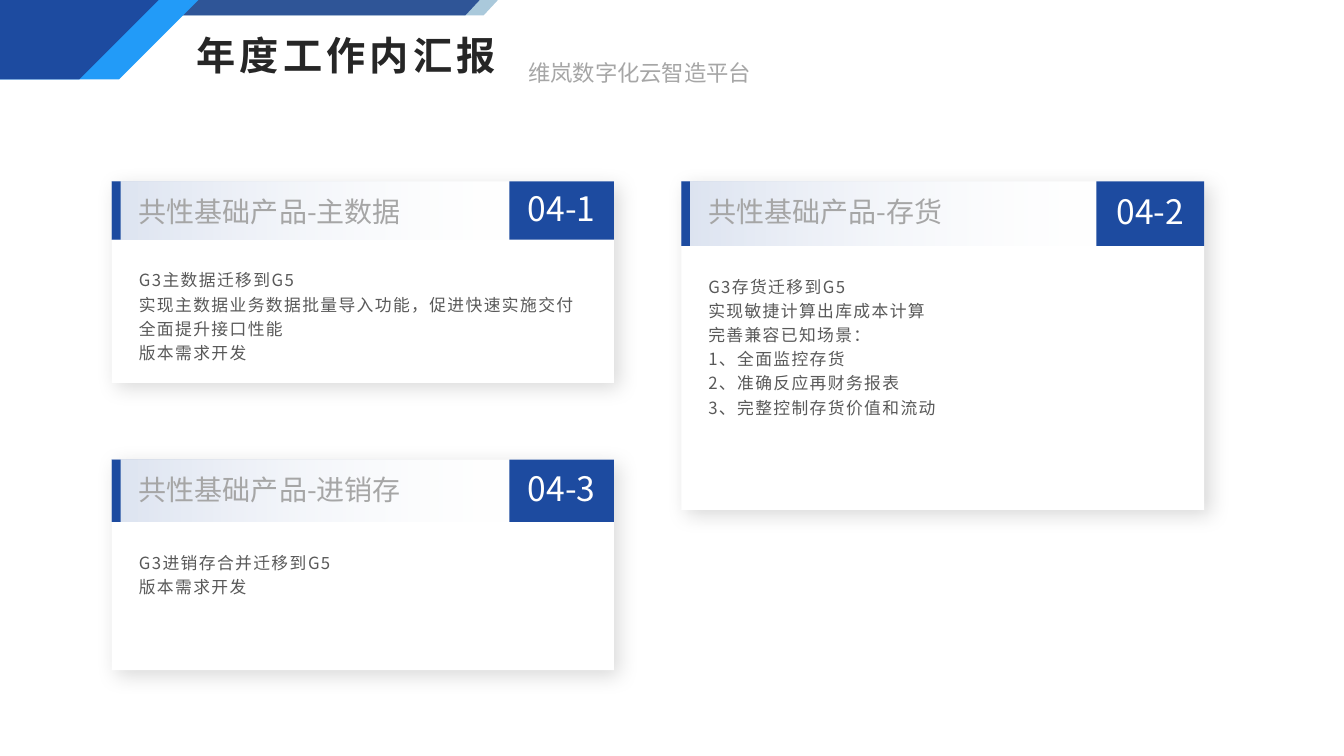
from lxml.etree import SubElement
from pptx import Presentation
from pptx.dml.color import RGBColor
from pptx.enum.shapes import MSO_SHAPE
from pptx.enum.text import MSO_ANCHOR, PP_ALIGN
from pptx.oxml.ns import qn
from pptx.util import Cm, Pt

FONT = "Noto Sans CJK SC"
NAVY = RGBColor(0x1D, 0x4B, 0xA0)
SKY = RGBColor(0x22, 0x9B, 0xF8)
STEEL = RGBColor(0x2F, 0x55, 0x97)
TEAL = RGBColor(0x1A, 0x6D, 0x9F)
WHITE = RGBColor(0xFF, 0xFF, 0xFF)
BLACK = RGBColor(0x00, 0x00, 0x00)
INK = RGBColor(0x26, 0x26, 0x26)
TEXT = RGBColor(0x59, 0x59, 0x59)
GREY = RGBColor(0xA6, 0xA6, 0xA6)

CARDS = [
    ((2.82, 4.57, 12.65, 5.08), 1.47, 2.63, "04-1", "共性基础产品-主数据",
     ["G3主数据迁移到G5", "实现主数据业务数据批量导入功能，促进快速实施交付",
      "全面提升接口性能", "版本需求开发"]),
    ((17.17, 4.57, 13.18, 8.28), 1.63, 2.72, "04-2", "共性基础产品-存货",
     ["G3存货迁移到G5", "实现敏捷计算出库成本计算", "完善兼容已知场景：",
      "1、全面监控存货", "2、准确反应再财务报表", "3、完整控制存货价值和流动"]),
    ((2.82, 11.58, 12.65, 5.31), 1.57, 2.63, "04-3", "共性基础产品-进销存",
     ["G3进销存合并迁移到G5", "版本需求开发"]),
]


def set_alpha(color, percent):
    """Give an srgbClr element an opacity in percent."""
    SubElement(color, qn("a:alpha"), val=str(percent * 1000))


def paint(sp, color):
    """Fill a shape plainly, without outline or shadow."""
    sp.shadow.inherit = False
    sp.fill.solid()
    sp.fill.fore_color.rgb = color
    sp.line.fill.background()
    return sp


def add_block(s, box, color, kind=MSO_SHAPE.RECTANGLE):
    """Add a filled preset shape; box is in centimetres."""
    return paint(s.shapes.add_shape(kind, *map(Cm, box)), color)


def write(tf, lines, size, color, bold=False, spacing=0, leading=None):
    """Write one paragraph per line in a shared style."""
    for i, line in enumerate(lines):
        p = tf.add_paragraph() if i else tf.paragraphs[0]
        p.text = line
        p.line_spacing = leading
        font = p.font
        font.name, font.size, font.bold = FONT, Pt(size), bold
        font.color.rgb = color
        props = p._p.pPr.find(qn("a:defRPr"))
        props.set("spc", str(spacing * 100))
        SubElement(props, qn("a:ea"), typeface=FONT)


def add_text(s, box, lines, size, color, wrap=True, **style):
    """Add a text box; box is in centimetres."""
    tf = s.shapes.add_textbox(*map(Cm, box)).text_frame
    tf.word_wrap = wrap
    write(tf, lines, size, color, **style)


def add_slant(s, top_right, bottom_right, height, color):
    """Add a corner block with a slanted right side."""
    fb = s.shapes.build_freeform(0, 0, scale=Cm(1))
    fb.add_line_segments([(top_right, 0), (bottom_right, height), (0, height)])
    paint(fb.convert_to_shape(), color)


def add_header(s):
    """Draw the top band, the title and the subtitle."""
    for left, color in ((3, TEAL), (2.54, STEEL)):
        band = add_block(s, (left, 0, 9.55, 0.39), color, MSO_SHAPE.PARALLELOGRAM)
        band.adjustments[0] = 0.93
        if color == TEAL:
            set_alpha(band._element.spPr.find(".//" + qn("a:srgbClr")), 37)
    add_slant(s, 5.11, 2.97, 2.29, SKY)
    add_slant(s, 4.19, 2.06, 2.29, NAVY)
    add_text(s, (4.7, 0.66, 8.15, 1.45), ["年度工作内汇报"], 28, INK,
             wrap=False, bold=True, spacing=3)
    add_text(s, (13.06, 1.37, 6.45, 0.94), ["维岚数字化云智造平台"], 16, GREY,
             wrap=False)


def add_shadow(sp):
    """Give a card its soft shadow."""
    effects = sp._element.spPr.find(qn("a:effectLst"))
    shadow = SubElement(effects, qn("a:outerShdw"), blurRad=str(Pt(15)),
                        dist=str(Pt(5)), dir="2700000", algn="tl", rotWithShape="0")
    set_alpha(SubElement(shadow, qn("a:srgbClr"), val=str(BLACK)), 15)


def add_fade(sp):
    """Fade a heading strip from navy to clear."""
    sp.fill.gradient()
    sp.fill.gradient_angle = 180
    for stop, color, alpha in zip(sp.fill.gradient_stops, (WHITE, NAVY), (0, 16)):
        stop.color.rgb = color
    for color, alpha in zip(sp._element.spPr.iter(qn("a:srgbClr")), (0, 16)):
        set_alpha(color, alpha)


def add_card(s, box, head, badge_width, number, title, lines):
    """Draw a card with heading strip, number badge and text."""
    left, top, width, height = box
    add_shadow(add_block(s, box, WHITE))
    add_fade(add_block(s, (left, top, width - 1.55, head), WHITE))
    add_block(s, (left, top, 0.22, head), NAVY)
    add_text(s, (left + 0.43, top + 0.2, width - 1.73, 1.1), [title], 20, GREY)
    add_text(s, (left + 0.43, top + head + 0.54, width - 0.6, height - head - 0.54),
             lines, 12, TEXT, spacing=1, leading=1.2)
    badge = add_block(s, (left + width - badge_width, top, badge_width, head), NAVY)
    tf = badge.text_frame
    tf.margin_top, tf.margin_bottom = 0, Cm(0.13)
    tf.vertical_anchor = MSO_ANCHOR.MIDDLE
    write(tf, [number], 24, WHITE)
    tf.paragraphs[0].alignment = PP_ALIGN.CENTER


def main():
    """Build and save the slide."""
    prs = Presentation()
    prs.slide_width, prs.slide_height = Cm(33.87), Cm(19.05)
    s = prs.slides.add_slide(prs.slide_layouts[6])
    add_header(s)
    for card in CARDS:
        add_card(s, *card)
    prs.save("out.pptx")


if __name__ == "__main__":
    main()
